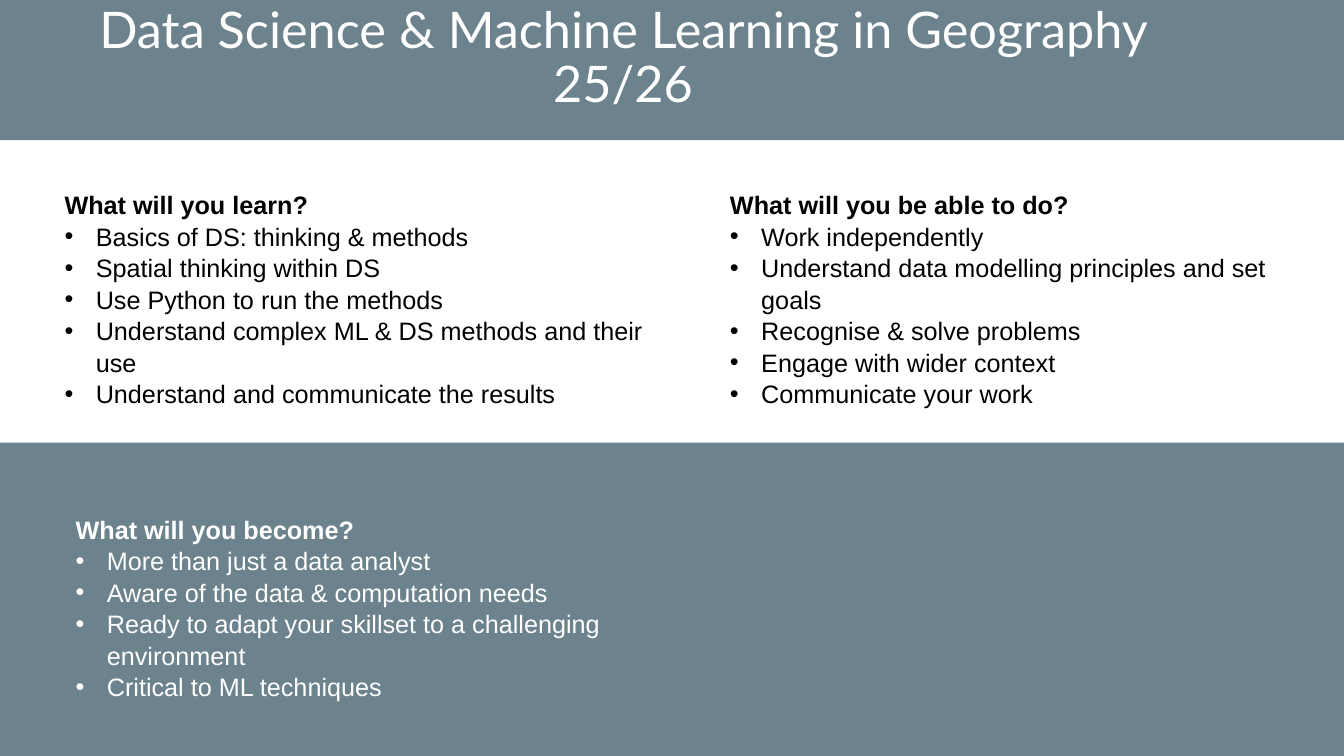
from dataclasses import dataclass

from lxml.etree import SubElement
from pptx import Presentation
from pptx.dml.color import RGBColor
from pptx.enum.shapes import MSO_SHAPE
from pptx.enum.text import MSO_ANCHOR, MSO_AUTO_SIZE, PP_ALIGN
from pptx.oxml.ns import qn
from pptx.util import Inches, Pt


@dataclass(frozen=True)
class Theme:
    navy: RGBColor = RGBColor(0x0B, 0x30, 0x41)
    white: RGBColor = RGBColor(0xFF, 0xFF, 0xFF)
    black: RGBColor = RGBColor(0, 0, 0)
    head: str = "Lato"
    body: str = "Arial"
    large: Pt = Pt(36)
    small: Pt = Pt(18)
    alpha: int = 60


THEME = Theme()

BANDS = [(-0.16, 4.39, 13.55, 3.22), (-0.56, -0.12, 14.45, 1.51)]
TITLE = "Data Science & Machine Learning in Geography 25/26"
LISTS = [
    ((0.54, 1.82, 6.23, 1.92), THEME.black, "What will you learn?", [
        "Basics of DS: thinking & methods",
        "Spatial thinking within DS",
        "Use Python to run the methods",
        "Understand complex ML & DS methods and their use",
        "Understand and communicate the results",
    ]),
    ((7.14, 1.82, 6.09, 2.22), THEME.black, "What will you be able to do?", [
        "Work independently",
        "Understand data modelling principles and set goals",
        "Recognise & solve problems",
        "Engage with wider context",
        "Communicate your work",
    ]),
    ((0.65, 5.04, 6.73, 1.92), THEME.white, "What will you become?", [
        "More than just a data analyst",
        "Aware of the data & computation needs",
        "Ready to adapt your skillset to a challenging environment",
        "Critical to ML techniques",
    ]),
]


def apply(item, values):
    for name, value in values.items():
        setattr(item, name, value)


def place(shape, box):
    """Move a shape to a box given in inches."""
    apply(shape, dict(zip(("left", "top", "width", "height"), map(Inches, box))))


def style(par, font, color, **values):
    """Format a paragraph's font and the paragraph itself."""
    apply(par.font, font)
    par.font.color.rgb = color
    apply(par, {"space_before": Pt(0), "space_after": Pt(0), **values})


def add_band(slide, box):
    """Add a translucent band behind all the text."""
    band = slide.shapes.add_shape(MSO_SHAPE.RECTANGLE, *map(Inches, box))
    band.shadow.inherit = False
    band.line.fill.background()
    band.fill.solid()
    band.fill.fore_color.rgb = THEME.navy
    tint = band.fill._xPr.find(qn("a:solidFill"))[0]
    SubElement(tint, qn("a:alpha"), val=str(THEME.alpha * 1000))
    slide.shapes._spTree.insert(2, band._element)


def fill_title(shape, box):
    place(shape, box)
    frame = shape.text_frame
    frame.text = TITLE
    apply(frame, {"word_wrap": True, "auto_size": MSO_AUTO_SIZE.NONE,
                  "vertical_anchor": MSO_ANCHOR.BOTTOM})
    style(frame.paragraphs[0], {"name": THEME.head, "size": THEME.large},
          THEME.white, alignment=PP_ALIGN.CENTER, line_spacing=0.9)


def set_bullet(par, mark):
    """Hang a bullet on a paragraph, or clear it if there is no mark."""
    props = par._p.get_or_add_pPr()
    hang = Inches(0.31) if mark else 0
    props.set("marL", str(hang))
    props.set("indent", str(-hang))
    if mark:
        SubElement(props, qn("a:buFont"), typeface=THEME.body)
        SubElement(props, qn("a:buChar"), char=mark)
    else:
        SubElement(props, qn("a:buNone"))


def fill_list(shape, box, color, head, items):
    """Fill a body placeholder with a bold heading and bullets."""
    place(shape, box)
    frame = shape.text_frame
    frame.text = "\n".join([head, *items])
    apply(frame, {"word_wrap": True, "vertical_anchor": MSO_ANCHOR.TOP,
                  "auto_size": MSO_AUTO_SIZE.SHAPE_TO_FIT_TEXT})
    for row, par in enumerate(frame.paragraphs):
        font = {"name": THEME.body, "size": THEME.small, "bold": row == 0}
        style(par, font, color, alignment=PP_ALIGN.LEFT, line_spacing=1.04)
        set_bullet(par, "•" if row else None)


def main():
    deck = Presentation()
    apply(deck, {"slide_width": Inches(13.33), "slide_height": Inches(7.5)})
    slide = deck.slides.add_slide(deck.slide_layouts.get_by_name("Comparison"))
    title, *bodies = slide.placeholders
    for box in BANDS:
        add_band(slide, box)
    fill_title(title, (0.17, 0.14, 12.02, 1.04))
    for body, entry in zip(bodies, LISTS):
        fill_list(body, *entry)
    for spare in bodies[len(LISTS):]:
        spare._element.getparent().remove(spare._element)
    deck.save("out.pptx")


if __name__ == "__main__":
    main()
